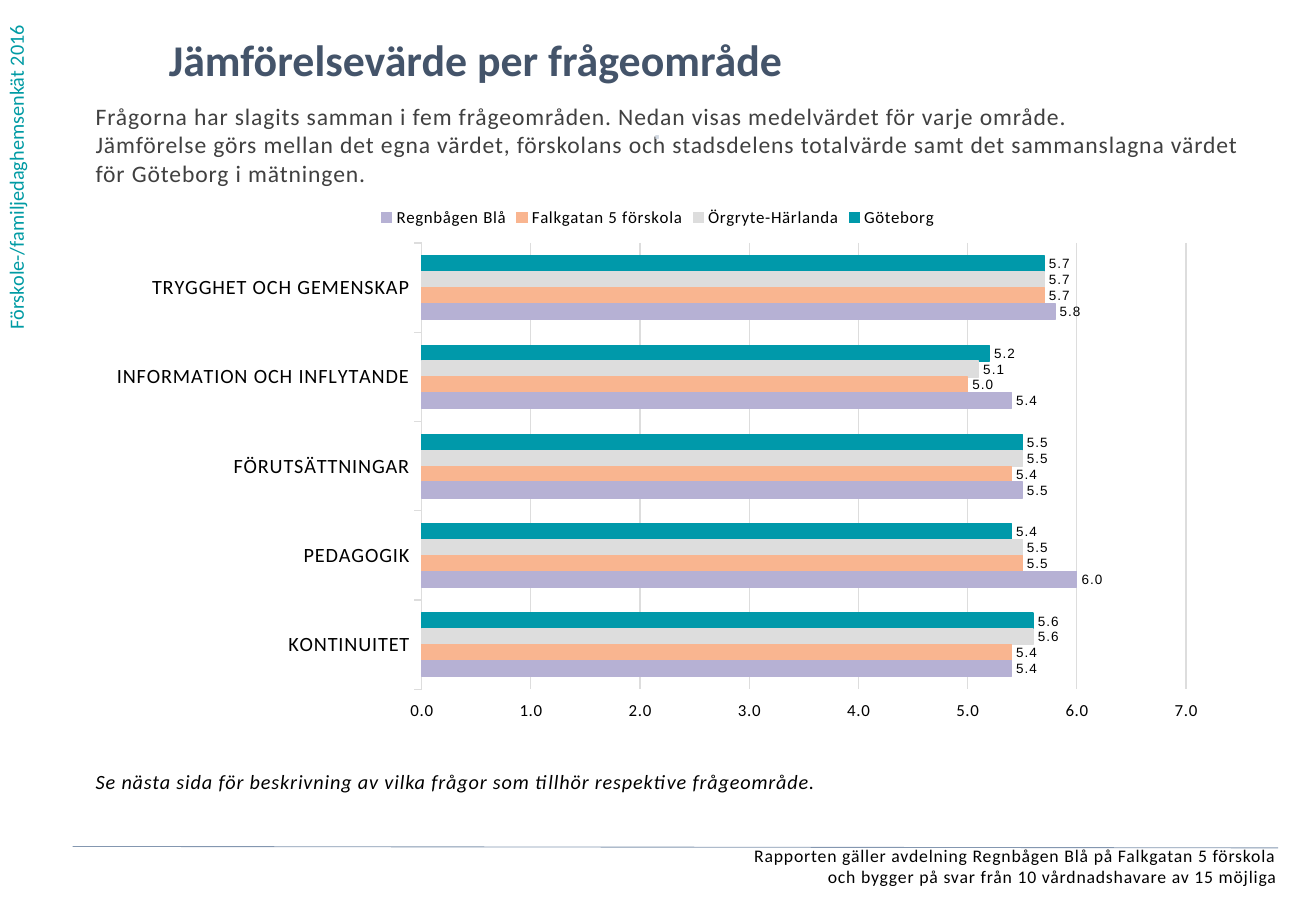
from dataclasses import dataclass

from lxml import etree
from pptx import Presentation
from pptx import util as u
from pptx.chart.data import CategoryChartData
from pptx.dml.color import RGBColor
from pptx.enum import chart as ch, shapes, text
from pptx.oxml.ns import qn


@dataclass(frozen=True)
class Theme:
    font: str = "Calibri"
    label_font: str = "Arial"
    ink: str = "000000"
    heading: str = "44546A"
    body: str = "404040"
    teal: str = "009BA4"
    dot: str = "D2D9E2"
    rule: str = "8497B0"
    grid: str = "DDDDDD"
    title_size: float = 26
    body_size: float = 14
    note_size: float = 12
    footer_size: float = 10.5
    chart_size: float = 10
    label_size: float = 8
    spacing: int = 50  # hundredths of a point


AREAS = ["TRYGGHET OCH GEMENSKAP", "INFORMATION OCH INFLYTANDE",
         "FÖRUTSÄTTNINGAR", "PEDAGOGIK", "KONTINUITET"]
RESULTS = [
    ("Göteborg", "0099AA", (5.7, 5.2, 5.5, 5.4, 5.6)),
    ("Örgryte-Härlanda", "DDDDDD", (5.7, 5.1, 5.5, 5.5, 5.6)),
    ("Falkgatan 5 förskola", "F9B590", (5.7, 5.0, 5.4, 5.5, 5.4)),
    ("Regnbågen Blå", "B6B1D4", (5.8, 5.4, 5.5, 6.0, 5.4)),
]
NUMBER_FORMAT = "0.0;0.0"


def add_text(paragraph, content, *, font, size, color, bold=False,
             italic=False, spacing=0):
    """Write formatted text, with a line break at each newline."""
    for number, line in enumerate(content.split("\n")):
        if number:
            paragraph.add_line_break()
        run = paragraph.add_run()
        run.text = line
        run.font.name, run.font.size = font, u.Pt(size)
        run.font.bold, run.font.italic = bold, italic
        run.font.color.rgb = RGBColor.from_string(color)
        if spacing:
            run._r.get_or_add_rPr().set("spc", str(spacing))


def set_line(line, color, width=0.75):
    line.color.rgb = RGBColor.from_string(color)
    line.width = u.Pt(width)


def set_plot_area(chart, **fractions):
    """Fix the inner plot area as fractions of the chart."""
    area = chart._chartSpace.find(".//" + qn("c:plotArea"))
    layout = area.find(qn("c:layout"))
    if layout is None:
        layout = etree.Element(qn("c:layout"))
        area.insert(0, layout)
    manual = etree.SubElement(layout, qn("c:manualLayout"))
    settings = {"layoutTarget": "inner", "xMode": "edge", "yMode": "edge",
                **fractions}
    for name, value in settings.items():
        etree.SubElement(manual, qn("c:" + name)).set("val", str(value))


class ReportSlide:
    def __init__(self, deck, theme):
        self.theme = theme
        self.slide = deck.slides.add_slide(deck.slide_layouts[6])

    def text(self, content, left, top, width, height, *,
             align=text.PP_ALIGN.LEFT, vertical=False, **style):
        box = self.slide.shapes.add_textbox(
            *map(u.Cm, (left, top, width, height)))
        frame = box.text_frame
        frame.word_wrap = True
        if vertical:
            frame._txBody.bodyPr.set("vert", "vert270")
        else:
            frame.margin_left = frame.margin_right = 0
            frame.margin_top = frame.margin_bottom = 0
        paragraph = frame.paragraphs[0]
        paragraph.alignment = align
        add_text(paragraph, content, font=self.theme.font, **style)

    def rule(self, x1, y1, x2, y2):
        line = self.slide.shapes.add_connector(
            shapes.MSO_CONNECTOR.STRAIGHT, *map(u.Cm, (x1, y1, x2, y2)))
        set_line(line.line, self.theme.rule, 0.5)
        etree.SubElement(line._element.spPr, qn("a:effectLst"))

    def font(self, font, size, name=None):
        font.name, font.size = name or self.theme.font, u.Pt(size)
        font.color.rgb = RGBColor.from_string(self.theme.ink)

    def bar_chart(self, left, top, width, height):
        theme = self.theme
        data = CategoryChartData(number_format=NUMBER_FORMAT)
        data.categories = AREAS
        for name, _, values in RESULTS:
            data.add_series(name, values)
        chart = self.slide.shapes.add_chart(
            ch.XL_CHART_TYPE.BAR_CLUSTERED,
            *map(u.Cm, (left, top, width, height)), data).chart
        chart.has_title = False
        self.font(chart.font, theme.chart_size)

        # Legend
        chart.has_legend = True
        chart.legend.position = ch.XL_LEGEND_POSITION.TOP
        chart.legend.include_in_layout = False
        self.font(chart.legend.font, theme.chart_size)

        # Axes: first area on top, scale labels below the bars
        areas, scale = chart.category_axis, chart.value_axis
        areas.reverse_order = True
        areas.major_tick_mark = ch.XL_TICK_MARK.OUTSIDE
        self.font(areas.tick_labels.font, theme.note_size)
        set_line(areas.format.line, theme.grid)
        scale.minimum_scale, scale.maximum_scale, scale.major_unit = 0, 7, 1
        scale.major_tick_mark = ch.XL_TICK_MARK.OUTSIDE
        scale.tick_label_position = ch.XL_TICK_LABEL_POSITION.HIGH
        scale.format.line.fill.background()
        set_line(scale.major_gridlines.format.line, theme.grid)
        self.font(scale.tick_labels.font, theme.chart_size)
        scale.tick_labels.number_format = NUMBER_FORMAT
        scale.tick_labels.number_format_is_linked = False

        # Bars and their values
        plot = chart.plots[0]
        plot.gap_width, plot.overlap = 162, 0
        plot.vary_by_categories = False
        for series, (_, color, _) in zip(plot.series, RESULTS):
            series.format.fill.solid()
            series.format.fill.fore_color.rgb = RGBColor.from_string(color)
            set_line(series.format.line, color)
            labels = series.data_labels
            labels.show_value = True
            labels.position = ch.XL_LABEL_POSITION.OUTSIDE_END
            labels.number_format = NUMBER_FORMAT
            labels.number_format_is_linked = False
            self.font(labels.font, theme.label_size, theme.label_font)

        set_plot_area(chart, x=0.29, y=0.09, w=0.68, h=0.83)
        for properties in chart._chartSpace.iter(qn("a:defRPr")):
            properties.set("spc", str(theme.spacing))


def main():
    deck = Presentation()
    deck.slide_width, deck.slide_height = u.Cm(27.51), u.Cm(19.05)
    theme = Theme()
    report = ReportSlide(deck, theme)

    # Survey name along the left edge
    report.text("Förskole-/familjedaghemsenkät 2016", -0.05, 0, 1.02, 7.14,
                vertical=True, size=theme.note_size, color=theme.teal)

    # Heading and introduction
    report.text("Jämförelsevärde per frågeområde", 3.53, 0.69, 21.18, 1.45,
                size=theme.title_size, color=theme.heading, bold=True)
    report.text("Frågorna har slagits samman i fem frågeområden. "
                "Nedan visas medelvärdet för varje område.\n"
                "Jämförelse görs mellan det egna värdet, förskolans och "
                "stadsdelens totalvärde samt det sammanslagna värdet "
                "för Göteborg i mätningen.", 2, 2.13, 24.3, 1.9,
                size=theme.body_size, color=theme.body, spacing=theme.spacing)
    report.text("⋅", 9.83, 2.59, 7.82, 0.99, align=text.PP_ALIGN.CENTER,
                size=theme.note_size, color=theme.dot, bold=True,
                spacing=theme.spacing)

    # Comparison and note
    report.bar_chart(2, 4.07, 23.5, 11.25)
    report.text("Se nästa sida för beskrivning av vilka frågor som tillhör "
                "respektive frågeområde.", 2, 16.09, 23.5, 0.6,
                size=theme.note_size, color=theme.ink, italic=True,
                spacing=theme.spacing)

    # Footer
    report.rule(1.52, 17.7, 26.72, 17.73)
    report.text("Rapporten gäller avdelning Regnbågen Blå på Falkgatan 5 "
                "förskola\noch bygger på svar från 10 vårdnadshavare av 15 "
                "möjliga", 0.3, 17.66, 26.4, 1.09,
                align=text.PP_ALIGN.RIGHT, size=theme.footer_size,
                color=theme.ink, spacing=theme.spacing)

    deck.save("out.pptx")


if __name__ == "__main__":
    main()
